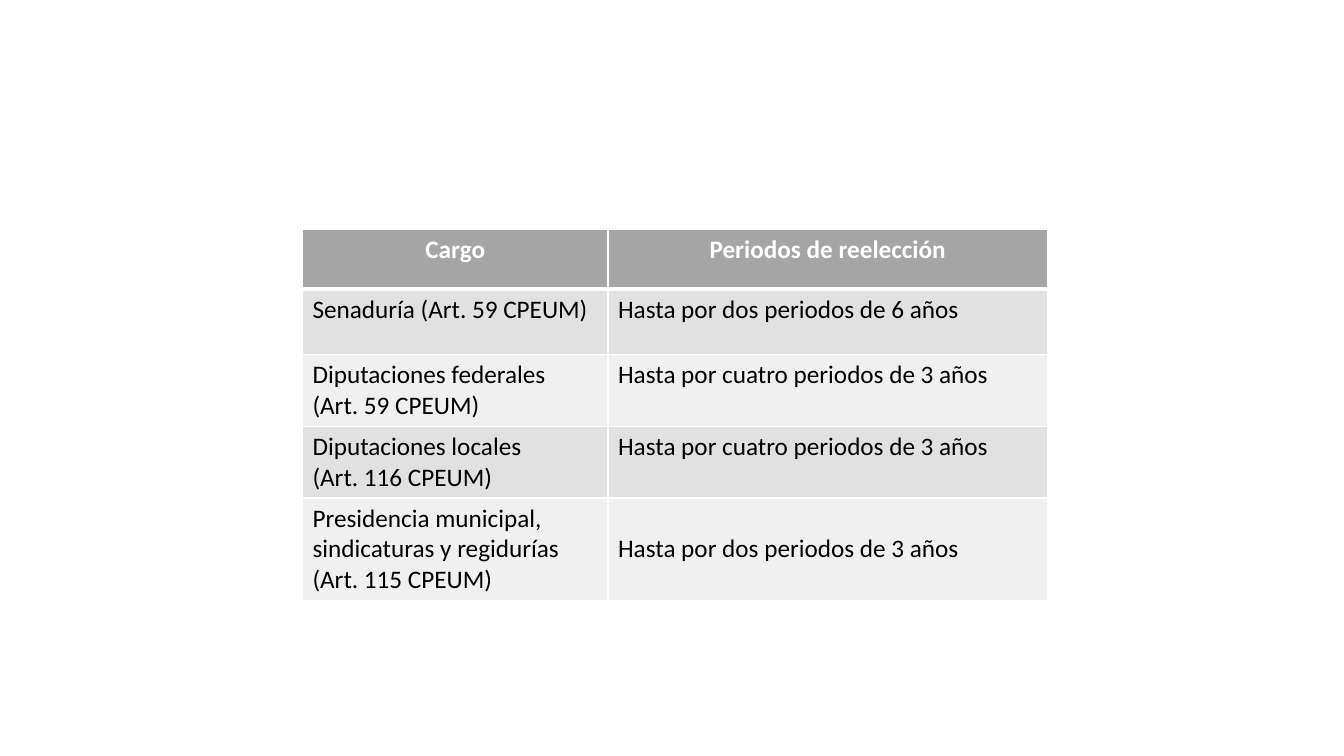
from dataclasses import dataclass

from lxml import etree
from pptx import Presentation
from pptx import util as u
from pptx.dml import color
from pptx.enum import text
from pptx.oxml import ns


@dataclass(frozen=True)
class Theme:
    font: str = "Calibri"
    size: int = 18
    head: str = "A5A5A5"
    bands: tuple[str, str] = ("E1E1E1", "F0F0F0")
    white: str = "FFFFFF"
    black: str = "000000"
    thin: int = 1
    thick: int = 3


@dataclass(frozen=True)
class Office:
    title: tuple[str, ...]
    term: str
    middle: bool = False


THEME = Theme()
UNIT = 0.1
LEFT, TOP = 30, 22.8
COLS = (30.3, 43.6)
HEAD, BODY = 5.9, 6.5

OFFICES = (
    Office(("Senaduría (Art. 59 CPEUM)",), "Hasta por dos periodos de 6 años"),
    Office(("Diputaciones federales", "(Art. 59 CPEUM)"),
           "Hasta por cuatro periodos de 3 años"),
    Office(("Diputaciones locales", "(Art. 116 CPEUM)"),
           "Hasta por cuatro periodos de 3 años"),
    Office(("Presidencia municipal, sindicaturas y regidurías", "(Art. 115 CPEUM)"),
           "Hasta por dos periodos de 3 años", True),
)


def grid(count: float) -> u.Length:
    return u.Inches(count * UNIT)


def edge(cell, side: str, width: int) -> None:
    line = etree.SubElement(cell._tc.get_or_add_tcPr(), ns.qn(f"a:ln{side}"),
                            w=str(u.Pt(width)))
    fill = etree.SubElement(line, ns.qn("a:solidFill"))
    etree.SubElement(fill, ns.qn("a:srgbClr"), val=THEME.white)


def write(cell, lines: tuple[str, ...], head: bool) -> None:
    frame = cell.text_frame
    for index, line in enumerate(lines):
        para = frame.add_paragraph() if index else frame.paragraphs[0]
        para.alignment = text.PP_ALIGN.CENTER if head else text.PP_ALIGN.LEFT
        run = para.add_run()
        run.text = line
        run.font.name = THEME.font
        run.font.size = u.Pt(THEME.size)
        run.font.bold = head
        run.font.color.rgb = color.RGBColor.from_string(
            THEME.white if head else THEME.black)


def paint(cell, row: int) -> None:
    edge(cell, "L", THEME.thin)
    edge(cell, "R", THEME.thin)
    edge(cell, "T", THEME.thick if row == 1 else THEME.thin)
    edge(cell, "B", THEME.thick if row == 0 else THEME.thin)
    shade = THEME.bands[(row - 1) % 2] if row else THEME.head
    cell.fill.solid()
    cell.fill.fore_color.rgb = color.RGBColor.from_string(shade)


def draw(slide) -> None:
    rows = (Office(("Cargo",), "Periodos de reelección"), *OFFICES)
    high = HEAD + BODY * len(OFFICES)
    table = slide.shapes.add_table(len(rows), len(COLS), grid(LEFT), grid(TOP),
                                   grid(sum(COLS)), grid(high)).table
    table.horz_banding = False
    for column, width in zip(table.columns, COLS):
        column.width = grid(width)
    for row, office in enumerate(rows):
        table.rows[row].height = grid(BODY if row else HEAD)
        for col, lines in enumerate((office.title, (office.term,))):
            cell = table.cell(row, col)
            paint(cell, row)
            write(cell, lines, row == 0)
            if col and office.middle:
                cell.vertical_anchor = text.MSO_ANCHOR.MIDDLE


def main() -> None:
    deck = Presentation()
    deck.slide_width, deck.slide_height = u.Inches(13.33), u.Inches(7.5)
    draw(deck.slides.add_slide(deck.slide_layouts.get_by_name("Blank")))
    deck.save("out.pptx")


if __name__ == "__main__":
    main()
